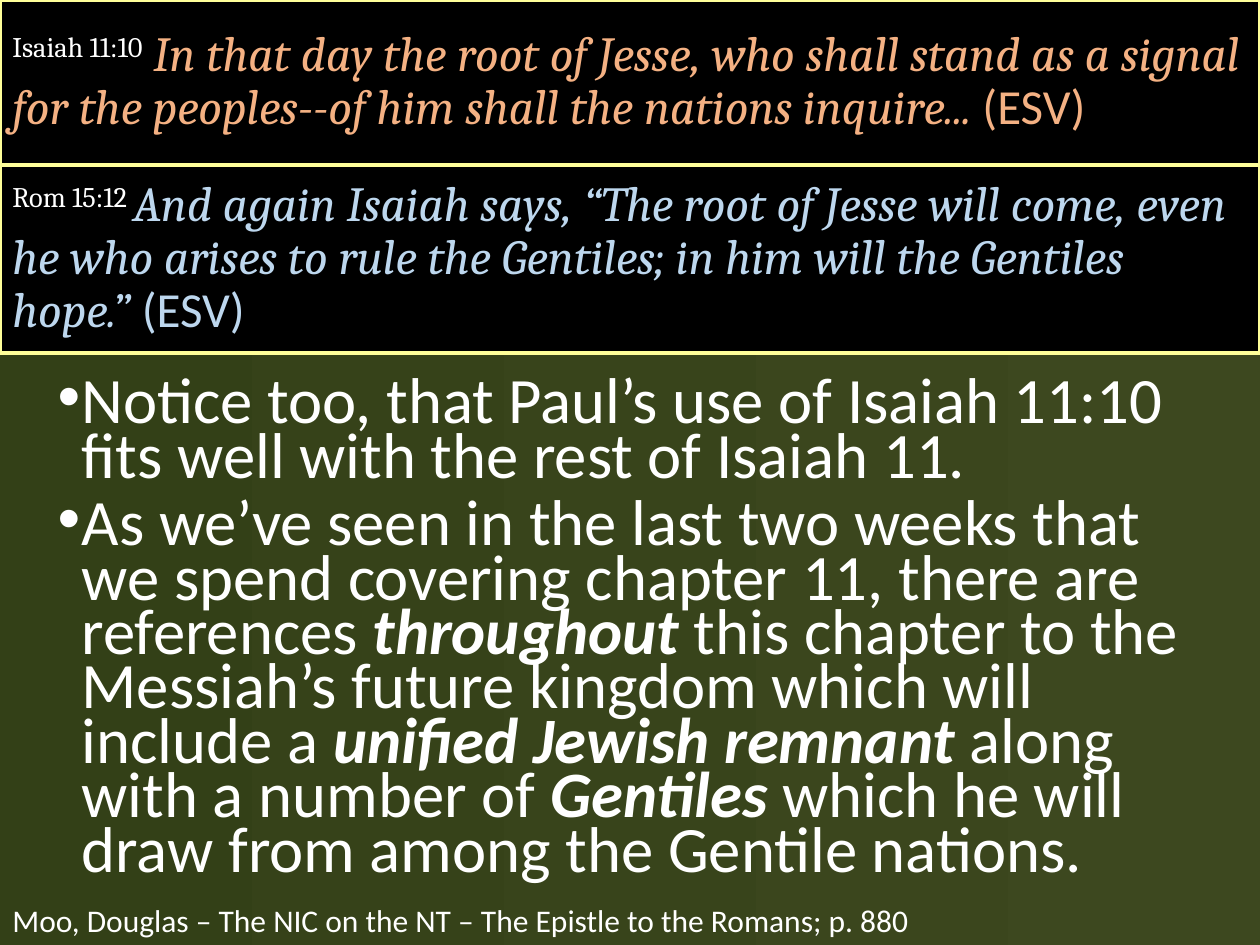
from lxml import etree
from pptx import Presentation
from pptx.dml.color import RGBColor
from pptx.enum.shapes import MSO_SHAPE
from pptx.enum.text import MSO_ANCHOR, PP_ALIGN
from pptx.oxml.ns import qn
from pptx.util import Inches, Pt

RECTANGLE = MSO_SHAPE.RECTANGLE
MIDDLE = MSO_ANCHOR.MIDDLE
LEFT = PP_ALIGN.LEFT

WHITE, BLACK, YELLOW = "FFFFFF", "000000", "FFFF99"
BACKGROUND = ["3D481F", "334017"]
VERSES = [
    {"top": 0, "height": 1.31, "color": "F4B183", "reference": "Isaiah 11:10",
     "quote": " In that day the root of Jesse, who shall stand as a signal for the "
              "peoples--of him shall the nations inquire... "},
    {"top": 1.31, "height": 1.49, "color": "BDD7EE", "reference": "Rom 15:12 ",
     "quote": "And again Isaiah says, “The root of Jesse will come, even he who arises "
              "to rule the Gentiles; in him will the Gentiles hope.” "},
]
TRANSLATION = "(ESV)"
POINTS = [
    [("Notice too, that Paul’s use of Isaiah 11:10 fits well with the rest of Isaiah 11.", False)],
    [("As we’ve seen in the last two weeks that we spend covering chapter 11, "
      "there are references ", False),
     ("throughout", True),
     (" this chapter to the Messiah’s future kingdom which will include a ", False),
     ("unified Jewish remnant ", True),
     ("along with a number of ", False),
     ("Gentiles", True),
     (" which he will draw from among the Gentile nations.", False)],
]
CITATION = "Moo, Douglas – The NIC on the NT – The Epistle to the Romans; p. 880"


def rgb(value):
    """Turn a hex string into a colour."""
    return RGBColor.from_string(value)


def add_run(paragraph, text, size, color=WHITE, font="Calibri", bold=False, italic=False):
    """Append a formatted run and return it."""
    run = paragraph.add_run()
    run.text = text
    run.font.size, run.font.name = Pt(size), font
    run.font.bold, run.font.italic = bold, italic
    run.font.color.rgb = rgb(color)
    return run


def set_spacing(paragraph, lines):
    """Left-align a paragraph and set its spacing."""
    paragraph.alignment = LEFT
    paragraph.line_spacing = lines
    paragraph.space_before = Pt(7.5)


def add_bullet(paragraph):
    """Give a paragraph a hanging bullet."""
    properties = paragraph._p.get_or_add_pPr()
    properties.set("marL", str(Inches(0.19)))
    properties.set("indent", str(Inches(-0.19)))
    etree.SubElement(properties, qn("a:buFont")).set("typeface", "Arial")
    etree.SubElement(properties, qn("a:buChar")).set("char", "•")


def add_text_frame(slide, left, top, width, height):
    """Add a wrapping text box and return its frame."""
    frame = slide.shapes.add_textbox(*map(Inches, (left, top, width, height))).text_frame
    frame.word_wrap = True
    return frame


def add_verse(slide, verse):
    """Add a bordered scripture panel."""
    panel = slide.shapes.add_shape(
        RECTANGLE, 0, Inches(verse["top"]), Inches(10), Inches(verse["height"]))
    panel.shadow.inherit = False
    panel.fill.solid()
    panel.fill.fore_color.rgb = rgb(BLACK)
    panel.line.color.rgb = rgb(YELLOW)
    panel.line.width = Pt(2)
    panel.text_frame.word_wrap = True
    panel.text_frame.vertical_anchor = MIDDLE
    paragraph = panel.text_frame.paragraphs[0]
    set_spacing(paragraph, 0.9)
    reference = add_run(paragraph, verse["reference"], 28, font="Cambria")
    reference._r.get_or_add_rPr().set("baseline", "30000")
    add_run(paragraph, verse["quote"], 28, verse["color"], "Cambria", italic=True)
    add_run(paragraph, TRANSLATION, 28, verse["color"])


def main():
    """Build the slide and save it."""
    deck = Presentation()
    deck.slide_width, deck.slide_height = Inches(10), Inches(7.5)
    slide = deck.slides.add_slide(deck.slide_layouts[6])

    backdrop = slide.background.fill
    backdrop.gradient()
    backdrop.gradient_angle = 180
    for stop, color, position in zip(backdrop.gradient_stops, BACKGROUND, (0, 1)):
        stop.color.rgb = rgb(color)
        stop.position = position

    body = add_text_frame(slide, 0.36, 2.97, 9.39, 4.15)
    for index, point in enumerate(POINTS):
        paragraph = body.add_paragraph() if index else body.paragraphs[0]
        set_spacing(paragraph, 0.7)
        add_bullet(paragraph)
        for text, stressed in point:
            add_run(paragraph, text, 37, bold=stressed, italic=stressed)

    citation = add_text_frame(slide, 0, 7.1, 10, 0.4)
    add_run(citation.paragraphs[0], CITATION, 18)

    for verse in VERSES:
        add_verse(slide, verse)

    deck.save("out.pptx")


if __name__ == "__main__":
    main()
